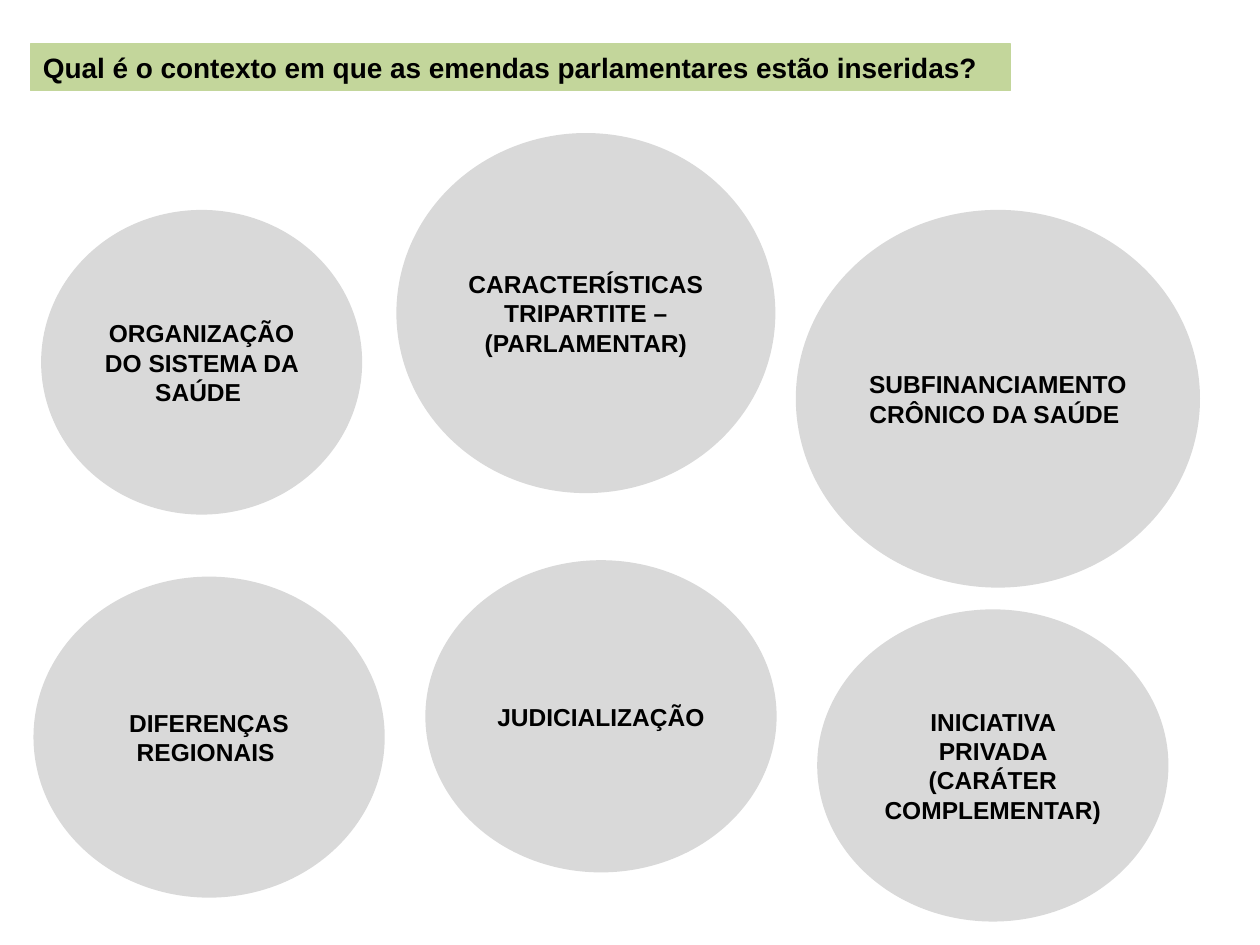
from pptx import Presentation
from pptx.dml.color import RGBColor
from pptx.enum.shapes import MSO_SHAPE
from pptx.enum.text import MSO_ANCHOR, MSO_AUTO_SIZE, PP_ALIGN
from pptx.util import Inches, Pt

COLORS = {"banner": "C3D69B", "circle": "D9D9D9", "text": "000000"}
TITLE = "Qual é o contexto em que as emendas parlamentares estão inseridas?"
CIRCLES = [
    ("ORGANIZAÇÃO DO SISTEMA DA SAÚDE ", 0.34, 1.68, 2.52, 2.39),
    ("CARACTERÍSTICAS TRIPARTITE – (PARLAMENTAR)", 3.16, 1.07, 2.98, 2.83),
    ("DIFERENÇAS REGIONAIS ", 0.28, 4.59, 2.76, 2.52),
    ("SUBFINANCIAMENTO CRÔNICO DA SAÚDE ", 6.33, 1.68, 3.18, 2.97),
    ("JUDICIALIZAÇÃO", 3.39, 4.46, 2.76, 2.45),
    ("INICIATIVA PRIVADA (CARÁTER COMPLEMENTAR)", 6.5, 4.85, 2.76, 2.45),
]


def paint(sp, color, line_width):
    """Give a shape a fill and a line of the same colour."""
    rgb = RGBColor.from_string(COLORS[color])
    sp.fill.solid()
    sp.fill.fore_color.rgb = rgb
    sp.line.color.rgb = rgb
    sp.line.width = Pt(line_width)


def write(sp, text, size, align, anchor):
    """Write one bold paragraph into a shape."""
    tf = sp.text_frame
    tf.word_wrap = True
    tf.auto_size = MSO_AUTO_SIZE.NONE
    tf.vertical_anchor = anchor
    p = tf.paragraphs[0]
    p.alignment = align
    r = p.add_run()
    r.text = text
    r.font.name = "Arial"
    r.font.size = Pt(size)
    r.font.bold = True
    r.font.color.rgb = RGBColor.from_string(COLORS["text"])


def add_title(s):
    """Turn the title placeholder into the banner."""
    sp = s.shapes.title
    sp.left, sp.top = Inches(0.24), Inches(0.35)
    sp.width, sp.height = Inches(7.78), Inches(0.37)
    paint(sp, "banner", 0.75)
    write(sp, TITLE, 16, PP_ALIGN.LEFT, MSO_ANCHOR.TOP)


def add_circle(s, text, *box):
    """Add a grey ellipse with a centred label."""
    sp = s.shapes.add_shape(MSO_SHAPE.OVAL, *map(Inches, box))
    sp.shadow.inherit = False
    paint(sp, "circle", 2)
    write(sp, text, 14, PP_ALIGN.CENTER, MSO_ANCHOR.MIDDLE)


def main():
    """Build the slide and save it."""
    prs = Presentation()
    prs.slide_width, prs.slide_height = Inches(10), Inches(7.5)
    s = prs.slides.add_slide(prs.slide_layouts[5])
    add_title(s)
    for circle in CIRCLES:
        add_circle(s, *circle)
    prs.save("out.pptx")


if __name__ == "__main__":
    main()
